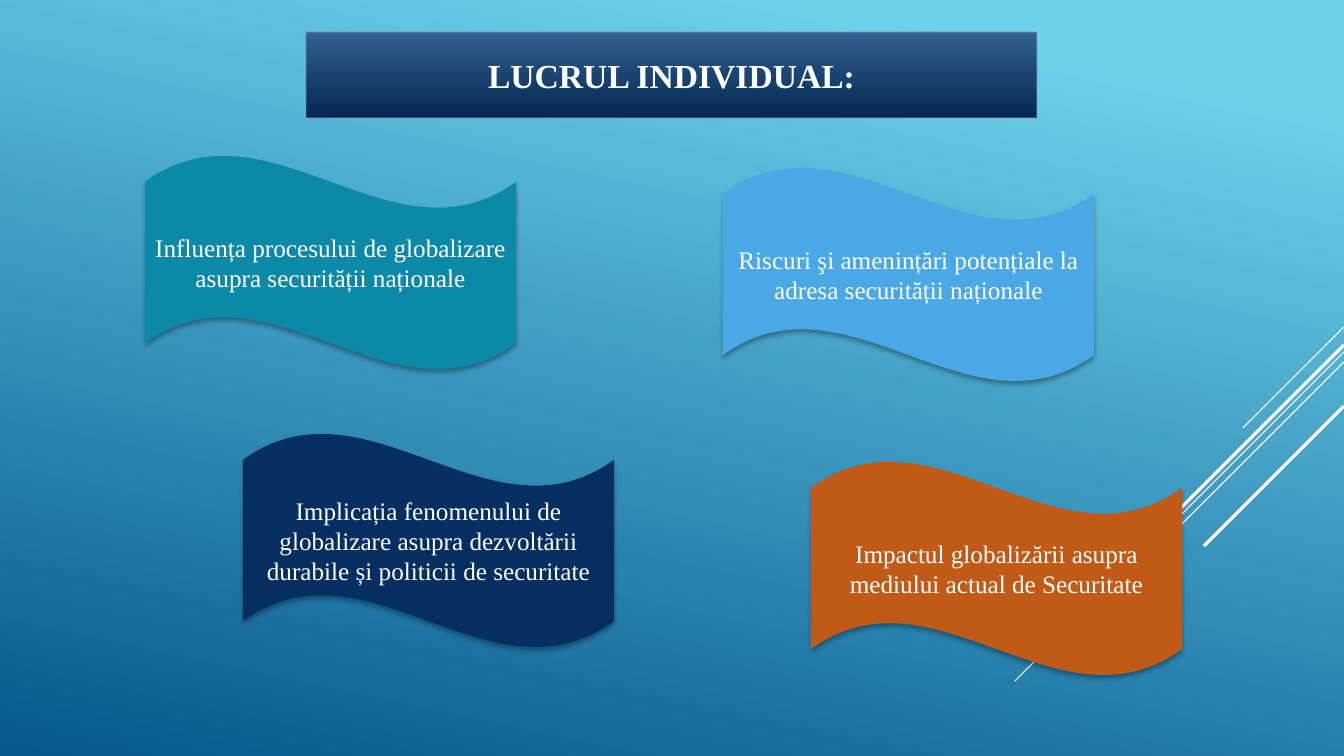
from pptx import Presentation
from pptx.dml.color import RGBColor
from pptx.enum import shapes, text
from pptx.oxml import parse_xml
from pptx.oxml.ns import nsdecls, qn
from pptx.util import Pt

PX = 914400 / 100.8
WIDE, HIGH = 1344, 756
FONT = "Times New Roman"
WHITE = "FFFFFF"

SKY = [(0.1, "6ED2EB"), (1, "06588E")]
NAVY = [(0, "316190"), (1, "042853")]
TITLE = ("LUCRUL INDIVIDUAL:", (306, 32, 731, 86))

# start y on the right edge, length across, width in points
RAYS = [(327, 101, 0.75), (352, 329, 0.75), (362, 209, 0.75),
        (345, 193, 2.25), (406, 140, 2.25)]

WAVE = (371, 215)
TOPICS = [
    ("Influența procesului de globalizare asupra securității naționale",
     (145, 155), "0D89A8"),
    ("Implicația fenomenului de globalizare asupra dezvoltării durabile "
     "și politicii de securitate", (243, 433), "052F61"),
    ("Riscuri şi amenințări potențiale la adresa securității naționale",
     (723, 167), "4AA8E7"),
    ("Impactul globalizării asupra mediului actual de Securitate",
     (811, 461), "C15A16"),
]


def emu(*vals):
    return [round(v * PX) for v in vals]


def rgb(code):
    return RGBColor.from_string(code)


def blend(fill, stops, angle):
    """Fill with a gradient; the angle runs clockwise from the right."""
    fill.gradient()
    fill.gradient_angle = 360 - angle
    for stop, (pos, code) in zip(fill.gradient_stops, stops):
        stop.position = pos
        stop.color.rgb = rgb(code)


def add_box(kind, box, words, size, bold=False):
    shape = slide.shapes.add_shape(kind, *emu(*box))
    shape.shadow.inherit = False
    frame = shape.text_frame
    frame.word_wrap = True
    frame.vertical_anchor = text.MSO_ANCHOR.MIDDLE
    para = frame.paragraphs[0]
    para.alignment = text.PP_ALIGN.CENTER
    run = para.add_run()
    run.text = words
    run.font.name, run.font.size, run.font.bold = FONT, Pt(size), bold
    run.font.color.rgb = rgb(WHITE)
    return shape


def add_ray(top, span, width):
    ray = slide.shapes.add_connector(
        shapes.MSO_CONNECTOR.STRAIGHT,
        *emu(WIDE, top, WIDE - span, top + span))
    ray.line.color.rgb = rgb(WHITE)
    ray.line.width = Pt(width)
    ray._element.spPr.append(parse_xml(f"<a:effectLst {nsdecls('a')}/>"))


def add_shade(shape):
    shade = parse_xml(
        f'<a:outerShdw {nsdecls("a")} blurRad="{Pt(3.5)}" dist="{Pt(2.2)}" '
        'dir="5400000" algn="ctr" rotWithShape="0"><a:srgbClr val="000000">'
        '<a:alpha val="32000"/></a:srgbClr></a:outerShdw>')
    shape._element.spPr.find(qn("a:effectLst")).append(shade)


deck = Presentation()
deck.slide_width, deck.slide_height = emu(WIDE, HIGH)
slide = deck.slides.add_slide(deck.slide_layouts[6])
blend(slide.background.fill, SKY, 102)

for ray in RAYS:
    add_ray(*ray)

words, box = TITLE
head = add_box(shapes.MSO_SHAPE.RECTANGLE, box, words, 24, True)
blend(head.fill, NAVY, 90)
head.line.color.rgb = rgb("89919C")
head.line.width = Pt(0.75)
tint = head.line._ln.find(".//" + qn("a:srgbClr"))
tint.append(parse_xml(f'<a:alpha {nsdecls("a")} val="60000"/>'))

for words, spot, code in TOPICS:
    wave = add_box(shapes.MSO_SHAPE.WAVE, spot + WAVE, words, 18)
    wave.fill.solid()
    wave.fill.fore_color.rgb = rgb(code)
    wave.line.fill.background()
    add_shade(wave)

deck.save("out.pptx")
